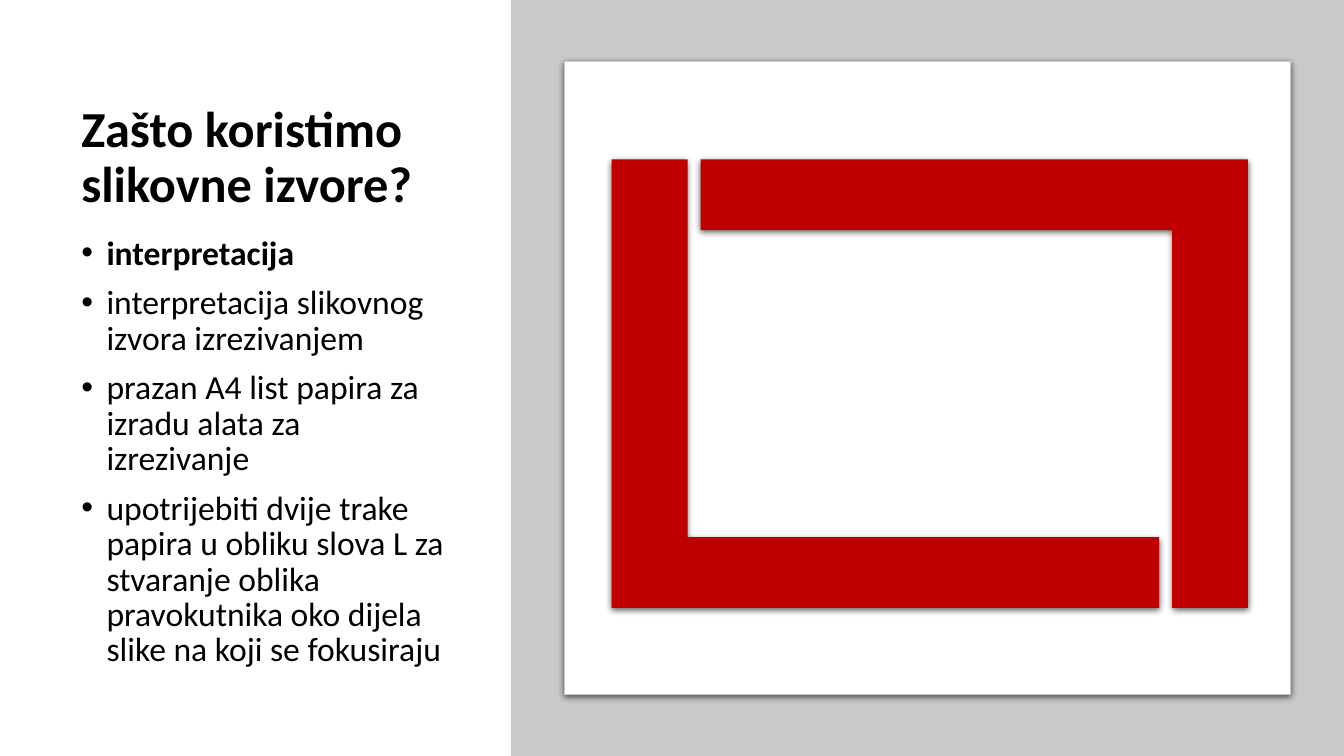
from dataclasses import dataclass

import lxml.etree
import pptx
import pptx.dml.color
import pptx.enum.shapes
import pptx.enum.text
import pptx.oxml
import pptx.oxml.ns
import pptx.util

Pt = pptx.util.Pt
Shapes = pptx.enum.shapes.MSO_SHAPE
Anchor = pptx.enum.text.MSO_ANCHOR
qn = pptx.oxml.ns.qn

GREY, WHITE, RED, BLACK = "C8CACA", "FFFFFF", "C00000", "000000"


@dataclass
class Panel:
    preset: int
    left: float
    top: float
    width: float
    height: float
    fill: str
    line: str = ""
    adjustments: tuple[float, ...] = ()
    rotation: float = 0
    shadow: bool = True


@dataclass
class Point:
    text: str
    bold: bool = False


def colour(value: str) -> pptx.dml.color.RGBColor:
    return pptx.dml.color.RGBColor.from_string(value)


def add_soft_shadow(shape) -> None:
    effects = shape._element.spPr.find(qn("a:effectLst"))
    outer = lxml.etree.SubElement(
        effects, qn("a:outerShdw"), blurRad=str(Pt(4.5)), dist=str(Pt(1.5)),
        dir="5400000", algn="ctr", rotWithShape="0")
    black = lxml.etree.SubElement(outer, qn("a:srgbClr"), val=BLACK)
    lxml.etree.SubElement(black, qn("a:alpha"), val="63000")


def draw_panel(slide, panel: Panel) -> None:
    shape = slide.shapes.add_shape(
        panel.preset, Pt(panel.left), Pt(panel.top), Pt(panel.width), Pt(panel.height))
    for index, value in enumerate(panel.adjustments):
        shape.adjustments[index] = value
    shape.rotation = panel.rotation
    shape.fill.solid()
    shape.fill.fore_color.rgb = colour(panel.fill)
    if panel.line:
        shape.line.color.rgb = colour(panel.line)
        shape.line.width = Pt(0.75)
    else:
        shape.line.fill.background()
    shape.shadow.inherit = False
    if panel.shadow:
        add_soft_shadow(shape)


def add_text_frame(slide, left: float, top: float, width: float, height: float, anchor):
    frame = slide.shapes.add_textbox(Pt(left), Pt(top), Pt(width), Pt(height)).text_frame
    frame.word_wrap = True
    frame.vertical_anchor = anchor
    return frame


def write(paragraph, text: str, *, size: float, bold: bool = False,
          line_spacing: float = 0.9, before: float = 0, bullet_indent: float = 0) -> None:
    paragraph.line_spacing = line_spacing
    paragraph.space_before = Pt(before)
    if bullet_indent:
        properties = paragraph._p.get_or_add_pPr()
        properties.set("marL", str(Pt(bullet_indent)))
        properties.set("indent", str(-Pt(bullet_indent)))
        lxml.etree.SubElement(properties, qn("a:buFont"), typeface="Arial")
        lxml.etree.SubElement(properties, qn("a:buChar"), char="•")
    run = paragraph.add_run()
    run.text = text
    run.font.name = "Calibri"
    run.font.size = Pt(size)
    run.font.bold = bold
    run.font.color.rgb = colour(BLACK)


STRIP = dict(preset=Shapes.CORNER, top=113.8, width=391, height=320.4,
             fill=RED, adjustments=(0.158, 0.169))
PANELS = [
    Panel(Shapes.RECTANGLE, 365, 0, 595, 540, GREY, shadow=False),
    Panel(Shapes.ROUNDED_RECTANGLE, 403.2, 44, 518.4, 452.2, WHITE,
          line=GREY, adjustments=(0,)),
    Panel(left=437, **STRIP),
    Panel(left=500.4, rotation=180, **STRIP),
]
POINTS = [
    Point("interpretacija", bold=True),
    Point("interpretacija slikovnog izvora izrezivanjem"),
    Point("prazan A4 list papira za izradu alata za izrezivanje"),
    Point("upotrijebiti dvije trake papira u obliku slova L za stvaranje oblika "
          "pravokutnika oko dijela slike na koji se fokusiraju"),
]


def main() -> None:
    deck = pptx.Presentation()
    deck.slide_width, deck.slide_height = Pt(960), Pt(540)
    slide = deck.slides.add_slide(deck.slide_layouts[6])

    question = add_text_frame(slide, 51, 49.7, 276, 127.4, Anchor.MIDDLE)
    write(question.paragraphs[0], "Zašto koristimo slikovne izvore?", size=36, bold=True)

    reasons = add_text_frame(slide, 51, 165.6, 276, 329.8, Anchor.TOP)
    for index, point in enumerate(POINTS):
        paragraph = reasons.add_paragraph() if index else reasons.paragraphs[0]
        write(paragraph, point.text, size=24, bold=point.bold,
              line_spacing=0.88, before=10, bullet_indent=18)

    for panel in PANELS:
        draw_panel(slide, panel)
    deck.save("out.pptx")


if __name__ == "__main__":
    main()
